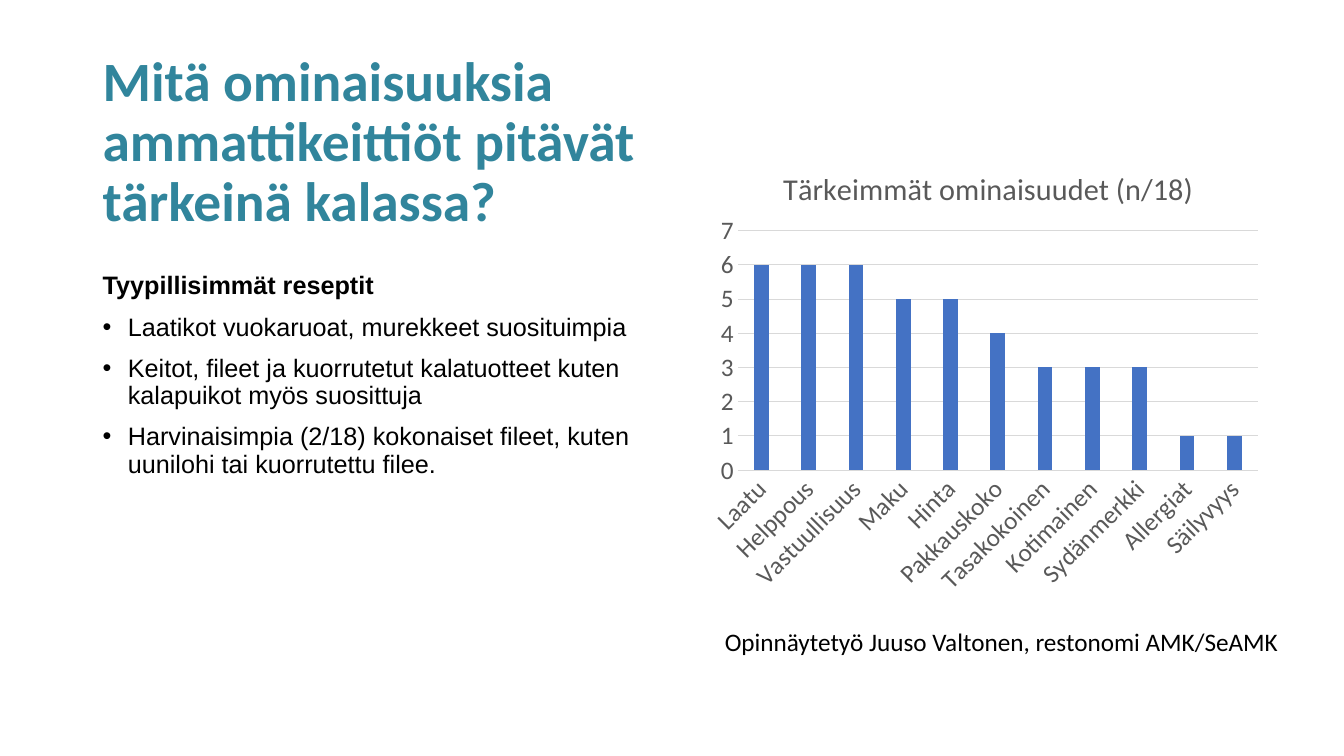
from lxml import etree
from pptx import Presentation
from pptx.chart.data import CategoryChartData
from pptx.dml.color import RGBColor
from pptx.enum.chart import XL_CHART_TYPE as ChartType, XL_TICK_MARK as Tick
from pptx.enum.text import MSO_ANCHOR as Anchor
from pptx.oxml import parse_xml
from pptx.oxml.ns import nsdecls, qn
from pptx.util import Inches, Pt

# Content
HEADING = "Mitä ominaisuuksia ammattikeittiöt pitävät tärkeinä kalassa?"
RECIPES_TITLE = "Tyypillisimmät reseptit"
RECIPES = [
    "Laatikot vuokaruoat, murekkeet suosituimpia",
    "Keitot, fileet ja kuorrutetut kalatuotteet kuten kalapuikot myös suosittuja",
    "Harvinaisimpia (2/18) kokonaiset fileet, kuten uunilohi tai kuorrutettu filee.",
]
CHART_TITLE = "Tärkeimmät ominaisuudet (n/18)"
QUALITIES = {
    "Laatu": 6, "Helppous": 6, "Vastuullisuus": 6, "Maku": 5, "Hinta": 5,
    "Pakkauskoko": 4, "Tasakokoinen": 3, "Kotimainen": 3, "Sydänmerkki": 3,
    "Allergiat": 1, "Säilyvyys": 1,
}
CREDIT = "Opinnäytetyö Juuso Valtonen, restonomi AMK/SeAMK"

# Formats
TEAL, BLACK, GREY, PALE, BLUE = "31859C", "000000", "595959", "D9D9D9", "4472C4"
HEADING_FONT = {"name": "Calibri", "size": Pt(39.6), "bold": True, "color": TEAL}
RECIPE_FONT = {"name": "Arial", "size": Pt(18), "bold": False, "color": BLACK}
CREDIT_FONT = {"name": "Calibri", "size": Pt(18), "color": BLACK}
AXIS_FONT = {"name": "Calibri", "size": Pt(18), "bold": False, "color": GREY}

# Two equal columns
MARGIN, COLUMN, GUTTER = 0.92, 5.67, 0.33
RIGHT = MARGIN + COLUMN + GUTTER


def rgb(color):
    return RGBColor.from_string(color)


def style(font, formats):
    for key, value in formats.items():
        if key == "color":
            font.color.rgb = rgb(value)
        else:
            setattr(font, key, value)


def add_text(slide, box, paragraphs, anchor=Anchor.TOP, spacing=0.9):
    frame = slide.shapes.add_textbox(*map(Inches, box)).text_frame
    frame.word_wrap = True
    frame.vertical_anchor = anchor
    for i, (words, formats, bulleted) in enumerate(paragraphs):
        paragraph = frame.add_paragraph() if i else frame.paragraphs[0]
        paragraph.line_spacing = spacing
        paragraph.space_before = Pt(10 if i else 0)
        if bulleted:
            props = paragraph._p.get_or_add_pPr()
            props.set("marL", str(Inches(0.25)))
            props.set("indent", str(-Inches(0.25)))
            etree.SubElement(props, qn("a:buFont")).set("typeface", "Arial")
            etree.SubElement(props, qn("a:buChar")).set("char", "•")
        run = paragraph.add_run()
        run.text = words
        style(run.font, formats)


def place(part, index, target, **shares):
    """Fix a chart part at shares of the chart's size."""
    for old in part.findall(qn("c:layout")):
        part.remove(old)
    modes = '<c:xMode val="edge"/><c:yMode val="edge"/>'
    sizes = "".join(f'<c:{key} val="{value}"/>' for key, value in shares.items())
    part.insert(index, parse_xml(
        f'<c:layout {nsdecls("c")}><c:manualLayout>{target}{modes}{sizes}'
        "</c:manualLayout></c:layout>"))


def add_qualities_chart(slide, box):
    data = CategoryChartData()
    data.categories = list(QUALITIES)
    data.add_series("Series 1", list(QUALITIES.values()))
    chart = slide.shapes.add_chart(
        ChartType.COLUMN_CLUSTERED, *map(Inches, box), data).chart
    style(chart.font, CREDIT_FONT)
    chart.has_legend = False

    # Title
    chart.has_title = True
    title = chart.chart_title
    title.text_frame.text = CHART_TITLE
    style(title.text_frame.paragraphs[0].runs[0].font, AXIS_FONT | {"size": Pt(21.6)})
    place(title._element, 1, "", x=0.14, y=0.04)

    # Columns
    plot = chart.plots[0]
    plot.vary_by_categories = False
    plot.gap_width, plot.overlap = 219, -27
    fill = plot.series[0].format.fill
    fill.solid()
    fill.fore_color.rgb = rgb(BLUE)

    # Axes
    names, counts = chart.category_axis, chart.value_axis
    for axis in (names, counts):
        axis.major_tick_mark = axis.minor_tick_mark = Tick.NONE
        style(axis.tick_labels.font, AXIS_FONT)
    names._element.find(qn("c:txPr")).find(qn("a:bodyPr")).set("rot", "-2700000")
    counts.minimum_scale, counts.maximum_scale, counts.major_unit = 0, 7, 1
    counts.has_major_gridlines = True
    counts.format.line.fill.background()
    for line in (names.format.line, counts.major_gridlines.format.line):
        line.color.rgb = rgb(PALE)
        line.width = Pt(0.75)
    place(names._element.getparent(), 0, '<c:layoutTarget val="inner"/>',
          x=0.07, y=0.19, w=0.91, h=0.52)


def main():
    deck = Presentation()
    deck.slide_width, deck.slide_height = Inches(13.33), Inches(7.5)
    slide = deck.slides.add_slide(deck.slide_layouts[6])

    recipes = [(RECIPES_TITLE, RECIPE_FONT | {"bold": True}, False)]
    recipes += [(recipe, RECIPE_FONT, True) for recipe in RECIPES]
    add_text(slide, (MARGIN, 2.66, COLUMN, 3.91), recipes)
    add_text(slide, (MARGIN, 0.4, 5.83, 2.05),
             [(HEADING, HEADING_FONT, False)], Anchor.MIDDLE)
    add_qualities_chart(slide, (RIGHT, 1.42, COLUMN, 4.57))
    add_text(slide, (7.09, 6.16, 6.67, 0.4),
             [(CREDIT, CREDIT_FONT, False)], spacing=1.0)
    deck.save("out.pptx")


if __name__ == "__main__":
    main()
